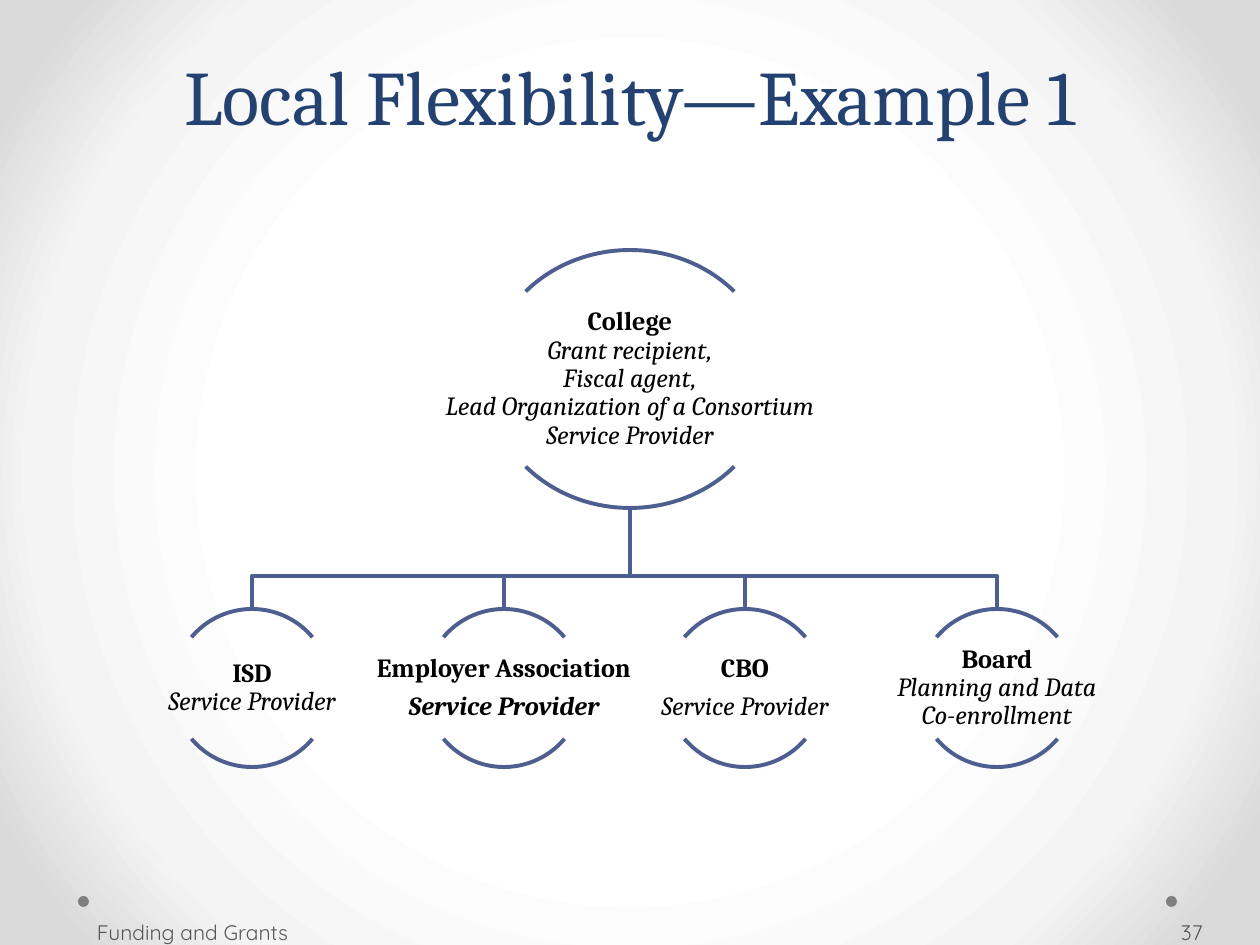
"""Build the Local Flexibility organisation chart slide."""
from lxml import etree
from pptx import Presentation
from pptx.dml.color import RGBColor
from pptx.enum.shapes import MSO_SHAPE
from pptx.enum.text import MSO_ANCHOR, PP_ALIGN
from pptx.oxml.ns import qn
from pptx.util import Emu, Pt

ARC, DOT = MSO_SHAPE.ARC, MSO_SHAPE.OVAL
MIDDLE, BOTTOM = MSO_ANCHOR.MIDDLE, MSO_ANCHOR.BOTTOM
CENTER = PP_ALIGN.CENTER
SCALE = 914400 / 126
NAVY = RGBColor(0x23, 0x42, 0x71)
SLATE = RGBColor(0x4D, 0x5E, 0x90)
BLACK = RGBColor(0, 0, 0)
DARK_GRAY = RGBColor(0x59, 0x59, 0x59)
GRAY = RGBColor(0x80, 0x80, 0x80)
GRADIENT = [(50, "FFFFFF"), (76, "F4F4F4"), (92, "DADADA")]

TITLE = "Local Flexibility—Example 1"
PLAIN, BOLD, ITALIC, BOLD_ITALIC = (False, False), (True, False), (False, True), (True, True)
COLLEGE = [[("College", BOLD), ("Grant recipient,", ITALIC), ("Fiscal agent,", ITALIC),
            ("Lead Organization of a Consortium", ITALIC), ("Service Provider", ITALIC)]]
PARTNERS = [
    (252, [[("ISD", BOLD), ("Service Provider", ITALIC)]]),
    (504, [[("Employer Association", BOLD)], [("Service Provider", BOLD_ITALIC)]]),
    (745, [[("CBO", BOLD)], [("Service Provider", ITALIC)]]),
    (997, [[("Board", BOLD), ("Planning and Data", ITALIC), ("Co-enrollment", ITALIC)]]),
]
FOOTERS = [("Funding and Grants", 91, 392, 6), ("37", 1177, 77, 4)]
DOTS = [78, 1166]
ROOT_X, ROOT_Y, ROOT_SIZE, ROOT_TEXT = 630, 379, (284, 258), (567, 165)
PARTNER_Y, PARTNER_SIZE, PARTNER_TEXT = 688, (158, 158), (315, 101)
BAR_Y = 576
ARC_ANGLES = [(132, 192), (24, 84)]


def px(*lengths):
    return [Emu(round(length * SCALE)) for length in lengths]


def paint_background(page):
    page.background.fill.gradient()
    gradient = page.element.find(".//" + qn("a:gradFill"))
    for child in list(gradient):
        gradient.remove(child)
    stops = etree.SubElement(gradient, qn("a:gsLst"))
    for position, color in GRADIENT:
        stop = etree.SubElement(stops, qn("a:gs"), pos=str(position * 1000))
        etree.SubElement(stop, qn("a:srgbClr"), val=color)
    circle = etree.SubElement(gradient, qn("a:path"), path="circle")
    etree.SubElement(circle, qn("a:fillToRect"), {side: "50000" for side in "ltrb"})


def set_font(font, name, size, color):
    font.name, font.size = name, Pt(size)
    font.color.rgb = color


def add_text_frame(page, bounds, margins):
    frame = page.shapes.add_textbox(*px(*bounds)).text_frame
    frame.word_wrap = True
    frame.vertical_anchor = MIDDLE
    (frame.margin_left, frame.margin_top,
     frame.margin_right, frame.margin_bottom) = px(*margins)
    return frame


def outline(shape):
    shape.shadow.inherit = False
    shape.fill.background()
    shape.line.color.rgb = SLATE
    shape.line.width = Pt(2.25)


def add_node(page, center_x, center_y, size, text_size, paragraphs):
    def centered(width, height):
        return center_x - width / 2, center_y - height / 2, width, height

    for angles in ARC_ANGLES:
        arc = page.shapes.add_shape(ARC, *px(*centered(*size)))
        arc.adjustments[0], arc.adjustments[1] = angles
        outline(arc)
    frame = add_text_frame(page, centered(*text_size), (1, 1, 1, 1))
    for index, lines in enumerate(paragraphs):
        para = frame.add_paragraph() if index else frame.paragraphs[0]
        para.alignment = CENTER
        para.line_spacing = 0.9
        para.space_after = Pt(5.5)
        set_font(para.font, "Cambria", 15, BLACK)
        for number, (text, (bold, italic)) in enumerate(lines):
            if number:
                para.add_line_break()
            span = para.add_run()
            span.text = text
            set_font(span.font, "Cambria", 15, BLACK)
            span.font.bold, span.font.italic = bold, italic


def add_branch(page, partner_x):
    start_y = ROOT_Y + ROOT_SIZE[1] // 2
    end_y = PARTNER_Y - PARTNER_SIZE[1] // 2
    builder = page.shapes.build_freeform(ROOT_X, start_y, scale=SCALE)
    builder.add_line_segments(
        [(ROOT_X, BAR_Y), (partner_x, BAR_Y), (partner_x, end_y)], close=False)
    outline(builder.convert_to_shape())


def add_title(page):
    title = page.shapes.title
    title.left, title.top, title.width, title.height = px(63, 5, 1134, 142)
    title.text_frame.text = TITLE
    title.text_frame.vertical_anchor = BOTTOM
    para = title.text_frame.paragraphs[0]
    para.alignment = CENTER
    para.line_spacing = Pt(58)
    set_font(para.font, "Cambria", 44, NAVY)


def add_footer(page):
    for left in DOTS:
        dot = page.shapes.add_shape(DOT, *px(left, 896, 11, 11))
        dot.shadow.inherit = False
        dot.fill.solid()
        dot.fill.fore_color.rgb = GRAY
        dot.line.fill.background()
    for text, left, width, margin in FOOTERS:
        frame = add_text_frame(page, (left, 907, width, 50), (margin, 6, 6, 6))
        frame.text = text
        set_font(frame.paragraphs[0].font, "Quicksand", 12, DARK_GRAY)


def main():
    deck = Presentation()
    deck.slide_width, deck.slide_height = px(1260, 945)
    page = deck.slides.add_slide(deck.slide_layouts[5])
    paint_background(page)
    add_title(page)
    add_footer(page)
    for partner_x, _ in PARTNERS:
        add_branch(page, partner_x)
    add_node(page, ROOT_X, ROOT_Y, ROOT_SIZE, ROOT_TEXT, COLLEGE)
    for partner_x, paragraphs in PARTNERS:
        add_node(page, partner_x, PARTNER_Y, PARTNER_SIZE, PARTNER_TEXT, paragraphs)
    deck.save("out.pptx")


if __name__ == "__main__":
    main()
